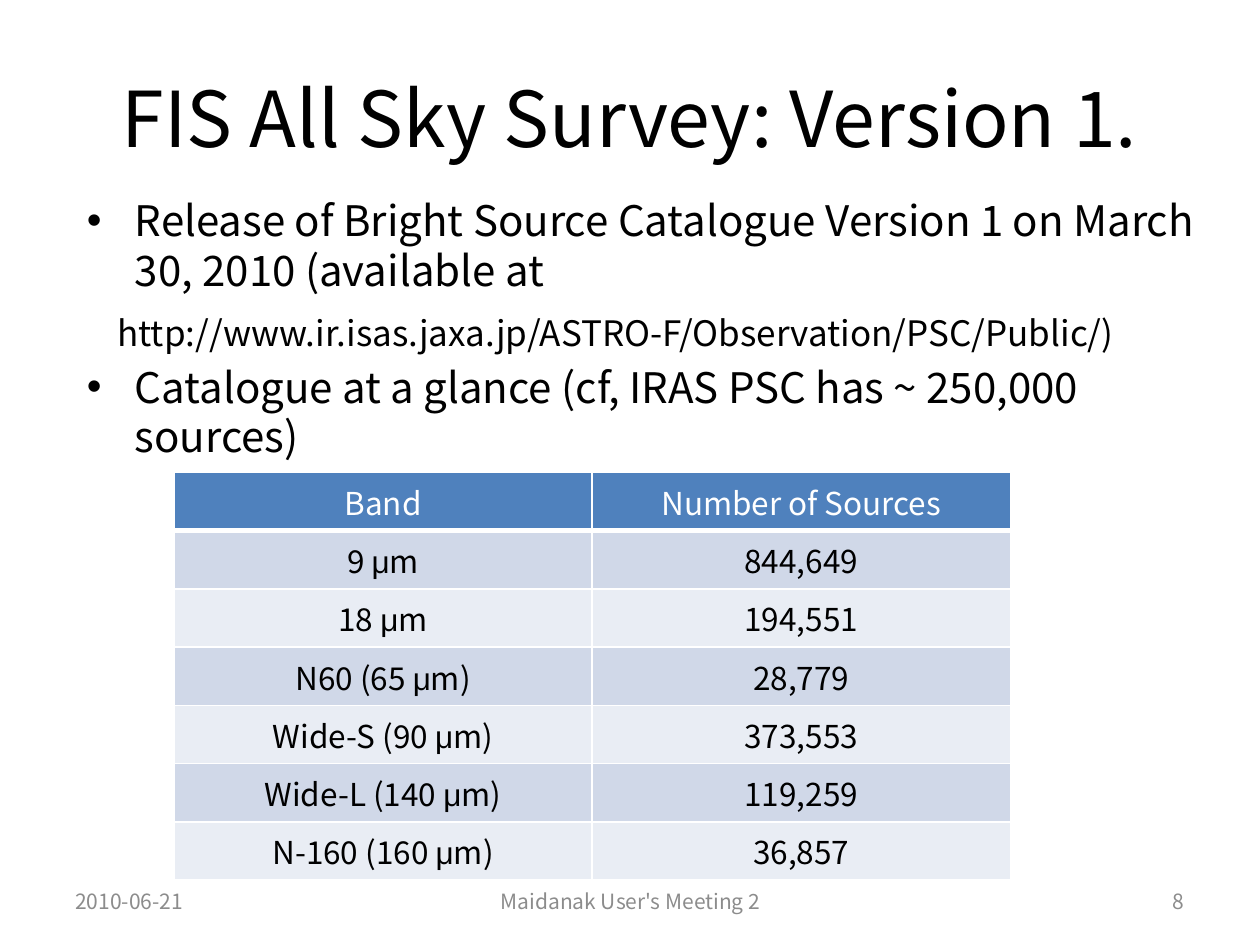
from lxml.etree import SubElement
from pptx import Presentation
from pptx.dml.color import RGBColor as RGB
from pptx.enum.text import MSO_ANCHOR as Anchor, MSO_AUTO_SIZE as Fit, PP_ALIGN as Align
from pptx.oxml.ns import qn
from pptx.util import Inches, Pt

# Content
TITLE = "FIS All Sky Survey: Version 1."
BODY = [  # text, size name, bulleted
    ("Release of Bright Source Catalogue Version 1 on March 30, 2010 (available at", "body", True),
    ("http://www.ir.isas.jaxa.jp/ASTRO-F/Observation/PSC/Public/)", "link", False),
    ("Catalogue at a glance (cf, IRAS PSC has ~ 250,000 sources)", "body", True),
]
ROWS = [
    ("Band", "Number of Sources"),
    ("9 μm", "844,649"),
    ("18 μm", "194,551"),
    ("N60 (65 μm)", "28,779"),
    ("Wide-S (90 μm)", "373,553"),
    ("Wide-L (140 μm)", "119,259"),
    ("N-160 (160 μm)", "36,857"),
]
FOOT = [  # text, left, width, alignment
    ("2010-06-21", 0.5, 2.33, Align.LEFT),
    ("Maidanak User's Meeting 2", 3.42, 3.17, Align.CENTER),
    ("8", 7.17, 2.33, Align.RIGHT),
]

# Theme
THEME = {
    "font": "Noto Sans CJK KR", "greek": "Arial",
    "ink": "000000", "white": "FFFFFF", "gray": "8C8C8C",
    "head": "4F81BD", "bands": ("E9EDF4", "D0D8E8"),
    "size": {"title": 44, "body": 24, "link": 20, "cell": 18, "foot": 12},
}


def put(item, **vals):
    for name, val in vals.items():
        setattr(item, name, val)


def style(font, size, color="ink", face="font"):
    put(font, name=THEME[face], size=Pt(THEME["size"][size]), bold=False)
    font.color.rgb = RGB.from_string(THEME[color])


def place(shape, *box):
    put(shape, **dict(zip(("left", "top", "width", "height"), map(Inches, box))))


def hang(para, left, first, mark):
    props = para._p.get_or_add_pPr()
    props.set("marL", str(Inches(left)))
    props.set("indent", str(Inches(first)))
    if mark:
        SubElement(props, qn("a:buFont")).set("typeface", "Arial")
        SubElement(props, qn("a:buChar")).set("char", "•")
    else:
        SubElement(props, qn("a:buNone"))


def edge(cell, side, width):
    line = SubElement(cell._tc.get_or_add_tcPr(), qn("a:ln" + side))
    line.set("w", str(Pt(width)))
    fill = SubElement(line, qn("a:solidFill"))
    SubElement(fill, qn("a:srgbClr")).set("val", THEME["white"])


deck = Presentation()
put(deck, slide_width=Inches(10), slide_height=Inches(7.5))
slide = deck.slides.add_slide(deck.slide_layouts[1])

# Title
title = slide.shapes.title
place(title, 0.5, 0.3, 9, 1.25)
put(title.text_frame, text=TITLE, auto_size=Fit.NONE, vertical_anchor=Anchor.MIDDLE)
head = title.text_frame.paragraphs[0]
head.alignment = Align.CENTER
style(head.runs[0].font, "title")

# Bullets
body = slide.placeholders[1]
place(body, 0.59, 1.47, 9, 4.95)
frame = body.text_frame
put(frame, text="\n".join(text for text, *_ in BODY), auto_size=Fit.NONE,
    word_wrap=True, margin_top=Inches(0.08))
for i, (para, (_, size, mark)) in enumerate(zip(frame.paragraphs, BODY)):
    hang(para, *((0.38, -0.38) if mark else (0.24, 0)), mark)
    put(para, line_spacing=Pt(28.5), space_before=Pt(4.8 if i else 0))
    style(para.runs[0].font, size)

# Source counts
grid = slide.shapes.add_table(len(ROWS), 2, Inches(1.38), Inches(3.75),
                              Inches(6.64), Inches(0.46 * len(ROWS))).table
for r, row in enumerate(ROWS):
    for c, text in enumerate(row):
        cell = grid.cell(r, c)
        for side in "LRTB":
            edge(cell, side, 3 if r == 0 and side == "B" else 1)
        cell.fill.solid()
        tint = THEME["bands"][r % 2] if r else THEME["head"]
        cell.fill.fore_color.rgb = RGB.from_string(tint)
        para = cell.text_frame.paragraphs[0]
        para.alignment = Align.CENTER
        for part in filter(None, text.partition("μ")):
            run = para.add_run()
            run.text = part
            style(run.font, "cell", "ink" if r else "white",
                  "greek" if part == "μ" else "font")

# Footer
for text, left, width, align in FOOT:
    box = slide.shapes.add_textbox(*map(Inches, (left, 6.95, width, 0.4)))
    put(box.text_frame, text=text, word_wrap=True, vertical_anchor=Anchor.MIDDLE)
    para = box.text_frame.paragraphs[0]
    para.alignment = align
    style(para.runs[0].font, "foot", "gray")

deck.save("out.pptx")
